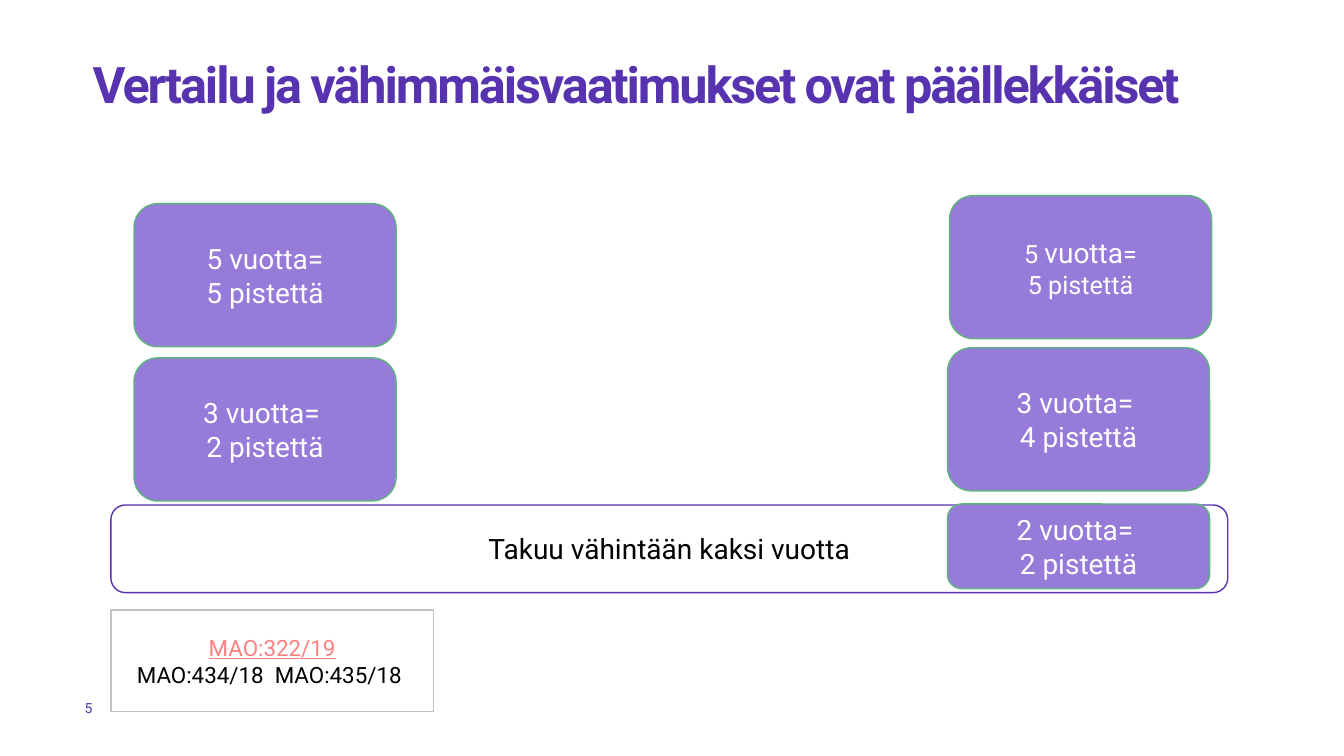
from pptx import Presentation
from pptx import util as u
from pptx.dml.color import RGBColor
from pptx.enum import shapes, text

PX = 9144  # EMU per px, at 100 px to the inch
FONT = "Roboto"
COLORS = {
    "violet": "5733AF",
    "lilac": "967BD9",
    "green": "5FB47D",
    "grey": "C5BFCA",
    "coral": "FE8081",
    "white": "FFFFFF",
    "black": "000000",
}
ROUNDED = shapes.MSO_SHAPE.ROUNDED_RECTANGLE
RECTANGLE = shapes.MSO_SHAPE.RECTANGLE


def px(*lengths):
    return [u.Emu(length * PX) for length in lengths]


def rgb(name):
    return RGBColor.from_string(COLORS[name])


def style(font, size, color):
    font.name = FONT
    font.size = u.Pt(size)
    font.color.rgb = rgb(color)


def clear_margins(frame):
    frame.margin_left = frame.margin_right = 0
    frame.margin_top = frame.margin_bottom = 0


def write_lines(frame, lines, size, color):
    """Write one centred paragraph per line; each line is a list of runs."""
    frame.word_wrap = True
    frame.vertical_anchor = text.MSO_ANCHOR.MIDDLE
    for index, runs in enumerate(lines):
        paragraph = frame.add_paragraph() if index else frame.paragraphs[0]
        paragraph.alignment = text.PP_ALIGN.CENTER
        style(paragraph.font, size, color)
        for words in runs:
            run = paragraph.add_run()
            run.text = words
            run.font.color.rgb = rgb(color)


def add_box(slide, kind, place, fill, line, lines, size=20, color="white"):
    box = slide.shapes.add_shape(kind, *px(*place))
    box.shadow.inherit = False
    box.fill.solid()
    box.fill.fore_color.rgb = rgb(fill)
    box.line.color.rgb = rgb(line)
    box.line.width = u.Pt(1)
    write_lines(box.text_frame, lines, size, color)
    return box.text_frame.paragraphs


def add_score(slide, left, top, height, lines, size=20):
    return add_box(slide, ROUNDED, (left, top, 260, height), "lilac", "green",
                   lines, size)


def add_title(slide, words):
    title = slide.shapes.title
    title.left, title.top, title.width, title.height = px(92, 59, 1166, 173)
    frame = title.text_frame
    clear_margins(frame)
    frame.word_wrap = True
    frame.auto_size = text.MSO_AUTO_SIZE.NONE
    frame.vertical_anchor = text.MSO_ANCHOR.TOP
    heading = frame.paragraphs[0]
    heading.alignment = text.PP_ALIGN.LEFT
    heading.line_spacing = 0.9
    style(heading.font, 36, "violet")
    heading.font.bold = True
    run = heading.add_run()
    run.text = words
    run._r.get_or_add_rPr().set("spc", "-150")  # tight letter spacing


def add_page_number(slide, number):
    frame = slide.shapes.add_textbox(*px(84, 690, 47, 24)).text_frame
    clear_margins(frame)
    frame.word_wrap = True
    frame.vertical_anchor = text.MSO_ANCHOR.MIDDLE
    frame.paragraphs[0].text = number
    style(frame.paragraphs[0].font, 10, "violet")


def main():
    deck = Presentation()
    deck.slide_width, deck.slide_height = u.Inches(13.333), u.Inches(7.5)
    slide = deck.slides.add_slide(deck.slide_layouts.get_by_name("Title Only"))

    add_title(slide, "Vertailu ja vähimmäisvaatimukset ovat päällekkäiset")
    add_page_number(slide, "5")

    # Minimum requirement
    add_box(slide, ROUNDED, (110, 501, 1108, 87), "white", "violet",
            [["Takuu vähintään kaksi vuotta"]], color="black")

    # Scores on the left
    add_score(slide, 133, 355, 142, [["3 vuotta= "], ["2 pistettä"]])
    add_score(slide, 133, 202, 142, [["5 vuotta="], ["5 pistettä"]])

    # Scores on the right, the lowest over the minimum requirement
    five_years = add_score(slide, 942, 194, 142,
                           [["5 ", "vuotta", "="], ["5 pistettä"]], size=18)
    five_years[0].runs[1].font.size = u.Pt(20)
    add_score(slide, 940, 345, 142, [["3 vuotta= "], ["4 pistettä"]])
    add_score(slide, 940, 500, 84, [["2 vuotta= "], ["2 pistettä"]])

    # Court rulings
    rulings = add_box(slide, RECTANGLE, (110, 605, 320, 101), "white", "grey",
                      [["MAO:322/19"], ["MAO:434/18  MAO:435/18 "]],
                      size=16, color="black")
    linked = rulings[0].runs[0].font
    linked.color.rgb = rgb("coral")
    linked.underline = True

    deck.save("out.pptx")


if __name__ == "__main__":
    main()
